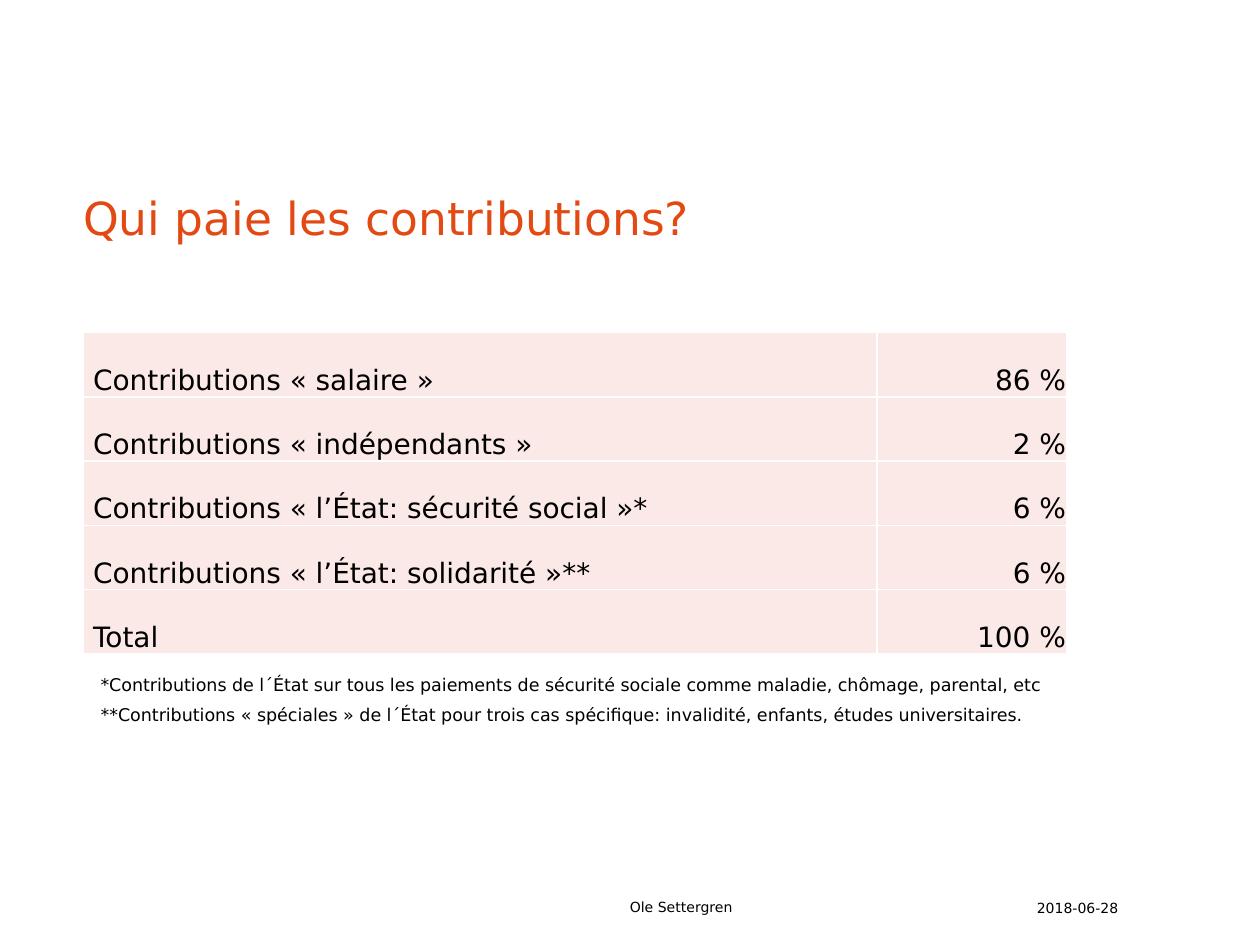
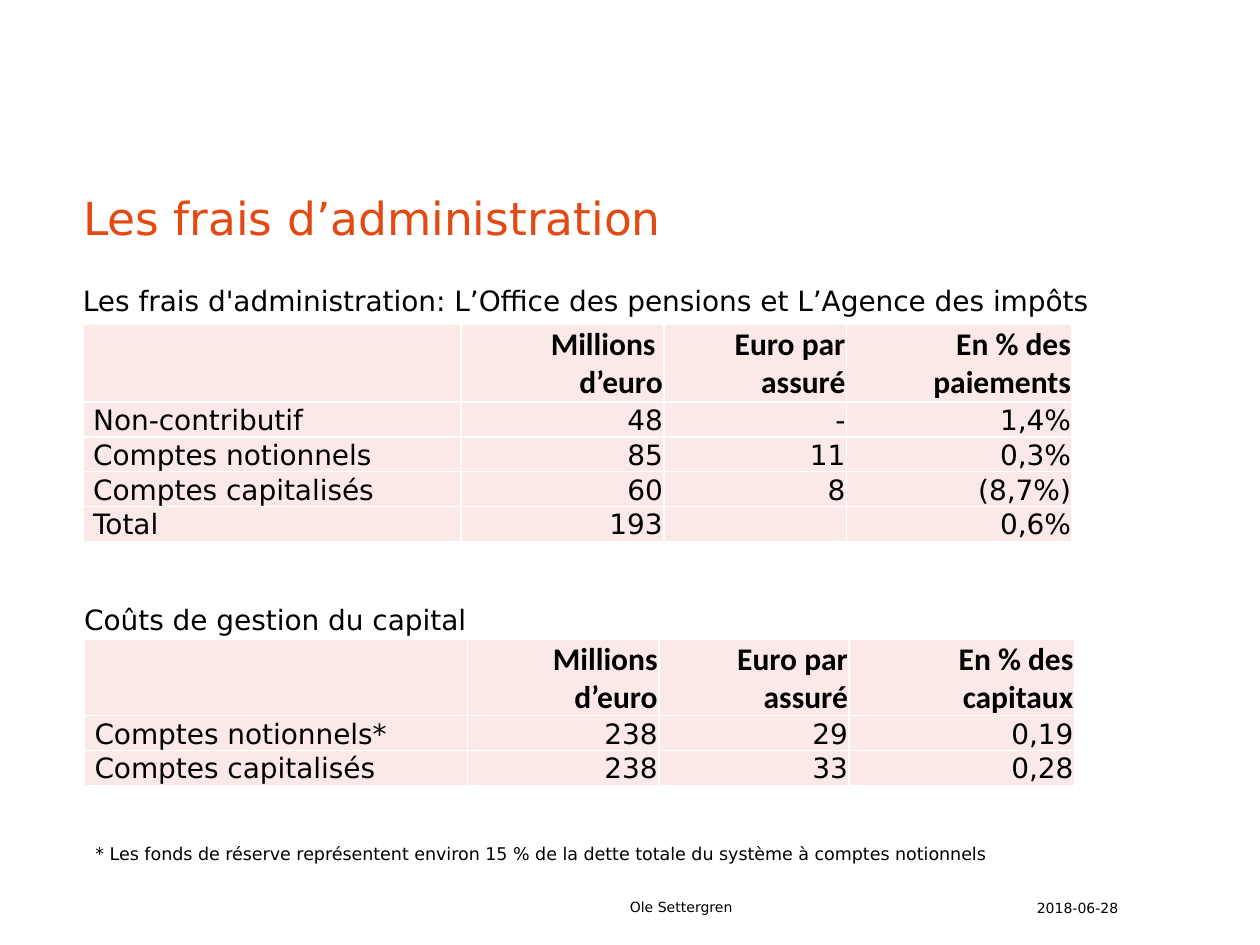
from pptx import Presentation
from pptx.dml.color import RGBColor
from pptx.enum.text import MSO_ANCHOR as Anchor, MSO_AUTO_SIZE as AutoSize, PP_ALIGN as Align
from pptx.oxml import parse_xml
from pptx.util import Inches, Pt

ORANGE = RGBColor(0xE3, 0x49, 0x12)
PINK = RGBColor(0xFA, 0xE9, 0xE7)
BLACK = RGBColor(0x00, 0x00, 0x00)
BODY_FONT, HEADER_FONT = "DejaVu Sans", "Calibri"

TITLE_BOX = (0.56, 1.08, 8.87, 0.91)
AUTHOR_BOX = (4.9, 7.08, 3.15, 0.24)
DATE_BOX = (8.13, 7.08, 0.98, 0.24)

DRAWING_NS = "http://schemas.openxmlformats.org/drawingml/2006/main"
BORDER_XML = (
    '<a:{side} xmlns:a="' + DRAWING_NS + '" w="12700"><a:solidFill>'
    '<a:srgbClr val="FFFFFF"/></a:solidFill></a:{side}>'
)


def style_font(para, size, color=BLACK, name=BODY_FONT, bold=False):
    font = para.font
    font.name, font.size, font.bold = name, Pt(size), bold
    font.color.rgb = color


def add_text(page, box, text, size, anchor=Anchor.TOP, wrap=False):
    """One line of text; unwrapped boxes fit their text."""
    frame = page.shapes.add_textbox(*map(Inches, box)).text_frame
    frame.word_wrap = wrap
    frame.auto_size = AutoSize.NONE if wrap else AutoSize.SHAPE_TO_FIT_TEXT
    frame.vertical_anchor = anchor
    frame.text = text
    style_font(frame.paragraphs[0], size)


def add_page(deck, title):
    """Page with the shared title and footer."""
    page = deck.slides.add_slide(deck.slide_layouts[5])
    heading = page.shapes.title
    heading.left, heading.top, heading.width, heading.height = map(Inches, TITLE_BOX)
    frame = heading.text_frame
    frame.text = title
    frame.auto_size = AutoSize.NONE
    frame.vertical_anchor = Anchor.BOTTOM
    para = frame.paragraphs[0]
    para.alignment = Align.LEFT
    para.line_spacing = Pt(30)
    style_font(para, 26, ORANGE)
    add_text(page, AUTHOR_BOX, "Ole Settergren", 8, Anchor.MIDDLE, wrap=True)
    add_text(page, DATE_BOX, "2018-06-28", 8, Anchor.BOTTOM, wrap=True)
    return page


def fill_cell(cell, text, is_label, is_header):
    cell.text = text
    cell.vertical_anchor = Anchor.BOTTOM
    cell.margin_left = Inches(0.08 if is_label else 0.01)
    cell.margin_top = cell.margin_right = Inches(0.01)
    cell.margin_bottom = 0
    for para in cell.text_frame.paragraphs:
        para.alignment = Align.LEFT if is_label else Align.RIGHT
        if is_header:
            style_font(para, 18, name=HEADER_FONT, bold=True)
        else:
            style_font(para, 16)
    # Borders come before the fill in the cell properties
    properties = cell._tc.get_or_add_tcPr()
    for side in ("lnL", "lnR", "lnT", "lnB"):
        properties.append(parse_xml(BORDER_XML.format(side=side)))
    cell.fill.solid()
    cell.fill.fore_color.rgb = PINK


def add_grid(page, left, top, widths, row_height, rows, header_height=None):
    """Table with a label column; a header height marks row one as header."""
    heights = [row_height] * len(rows)
    if header_height:
        heights[0] = header_height
    box = map(Inches, (left, top, sum(widths), sum(heights)))
    table = page.shapes.add_table(len(rows), len(widths), *box).table
    table.first_row = bool(header_height)
    table.horz_banding = False
    for column, width in zip(table.columns, widths):
        column.width = Inches(width)
    for r, (height, texts) in enumerate(zip(heights, rows)):
        table.rows[r].height = Inches(height)
        for c, text in enumerate(texts):
            fill_cell(table.cell(r, c), text, c == 0, bool(header_height) and r == 0)


def add_contributions_page(deck):
    page = add_page(deck, "Qui paie les contributions?")
    add_grid(page, 0.66, 2.64, (6.3, 1.51), 0.51, [
        ("Contributions « salaire »", "86 %"),
        ("Contributions « indépendants »", "2 %"),
        ("Contributions « l’État: sécurité social »*", "6 %"),
        ("Contributions « l’État: solidarité »**", "6 %"),
        ("Total", "100 %"),
    ])
    # Footnotes
    add_text(page, (0.7, 5.3, 7.8, 0.27),
             "*Contributions de l´État sur tous les paiements de sécurité sociale "
             "comme maladie, chômage, parental, etc", 10)
    add_text(page, (0.7, 5.54, 7.85, 0.27),
             "**Contributions « spéciales » de l´État pour trois cas spécifique: "
             "invalidité, enfants, études universitaires.", 10)


def add_costs_page(deck):
    page = add_page(deck, "Les frais d’administration")
    # Administration costs
    add_text(page, (0.56, 2.2, 8.32, 0.37),
             "Les frais d'administration: L’Office des pensions et L’Agence des impôts", 16)
    add_grid(page, 0.66, 2.57, (3, 1.61, 1.45, 1.79), 0.27, [
        ("", "Millions \nd’euro", "Euro par assuré", "En % des paiements"),
        ("Non-contributif", "48", "-", "1,4%"),
        ("Comptes notionnels", "85", "11", "0,3%"),
        ("Comptes capitalisés", "60", "8", "(8,7%)"),
        ("Total", "193", "", "0,6%"),
    ], header_height=0.62)
    # Capital management costs
    add_text(page, (0.57, 4.73, 3.27, 0.37), "Coûts de gestion du capital", 16)
    add_grid(page, 0.67, 5.07, (3.04, 1.52, 1.51, 1.79), 0.27, [
        ("", "Millions d’euro", "Euro par assuré", "En % des capitaux"),
        ("Comptes notionnels*", "238", "29", "0,19"),
        ("Comptes capitalisés", "238", "33", "0,28"),
    ], header_height=0.61)
    add_text(page, (0.66, 6.64, 7.36, 0.27),
             "* Les fonds de réserve représentent environ 15 % de la dette totale "
             "du système à comptes notionnels", 10)


def main():
    deck = Presentation()
    deck.slide_width, deck.slide_height = Inches(10), Inches(7.5)
    add_contributions_page(deck)
    add_costs_page(deck)
    deck.save("out.pptx")


if __name__ == "__main__":
    main()
